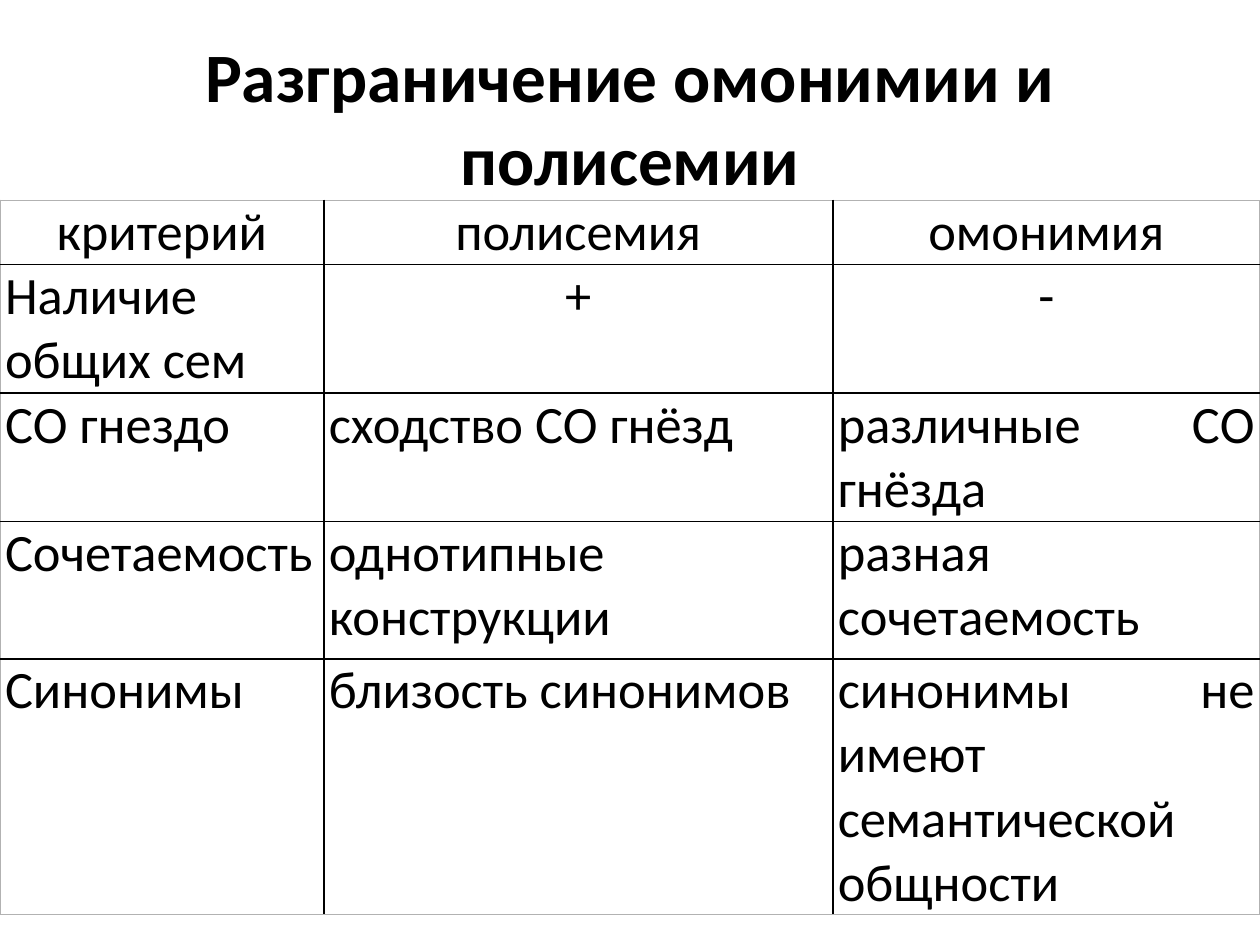
import pptx
import pptx.dml.color
import pptx.enum.text
import pptx.oxml
import pptx.oxml.ns
import pptx.util
from pptx.util import Inches

BLACK = pptx.dml.color.RGBColor(0, 0, 0)
GREY = pptx.dml.color.RGBColor(0xB2, 0xB2, 0xB2)
ALIGN = pptx.enum.text.PP_ALIGN
ANCHOR = pptx.enum.text.MSO_ANCHOR


def write(paragraph, text, alignment, font_format):
    paragraph.alignment = alignment
    run = paragraph.add_run()
    run.text = text
    run.font.color.rgb = BLACK
    for name, value in font_format.items():
        setattr(run.font, name, value)


def add_border(cell, side, color):
    cell._tc.get_or_add_tcPr().append(pptx.oxml.parse_xml(
        f'<a:{side} {pptx.oxml.ns.nsdecls("a")} w="12700"><a:solidFill>'
        f'<a:srgbClr val="{color}"/></a:solidFill></a:{side}>'))


presentation = pptx.Presentation()
presentation.slide_width = Inches(10)
presentation.slide_height = Inches(7.5)
slide = presentation.slides.add_slide(presentation.slide_layouts[6])

# Title
title = slide.shapes.add_textbox(Inches(0.5), Inches(0.3), Inches(9), Inches(1.25))
title.text_frame.word_wrap = True
title.text_frame.vertical_anchor = ANCHOR.MIDDLE
write(title.text_frame.paragraphs[0], "Разграничение омонимии и полисемии", ALIGN.CENTER,
      {"name": "Calibri", "size": pptx.util.Pt(39.6), "bold": True})

# Comparison of polysemy and homonymy
criteria = [
    ("критерий", "полисемия", "омонимия"),
    ("Наличие общих сем", "+", "-"),
    ("СО гнездо", "сходство СО гнёзд", "различные СО гнёзда"),
    ("Сочетаемость", "однотипные конструкции", "разная сочетаемость"),
    ("Синонимы", "близость синонимов", "синонимы не имеют семантической общности"),
]
column_widths = [2.57, 4.04, 3.39]
row_heights = [0.51, 1.02, 1.02, 1.09, 2.03]
comparison = slide.shapes.add_table(
    len(row_heights), len(column_widths), Inches(0), Inches(1.59),
    Inches(sum(column_widths)), Inches(sum(row_heights))).table
comparison.first_row = False
comparison.horz_banding = False
for column, width in zip(comparison.columns, column_widths):
    column.width = Inches(width)
for row, height in zip(comparison.rows, row_heights):
    row.height = Inches(height)

cell_format = {
    "margin_left": Inches(0.04), "margin_right": Inches(0.04),
    "margin_top": 0, "margin_bottom": 0, "vertical_anchor": ANCHOR.TOP,
}
cell_font = {"name": "Calibri", "size": pptx.util.Pt(30), "bold": False}
last_row, last_column = len(row_heights) - 1, len(column_widths) - 1
for r, entries in enumerate(criteria):
    for c, entry in enumerate(entries):
        cell = comparison.cell(r, c)
        for name, value in cell_format.items():
            setattr(cell, name, value)
        centred = r == 0 or entry in "+-"
        write(cell.text_frame.paragraphs[0], entry,
              ALIGN.CENTER if centred else ALIGN.JUSTIFY, cell_font)
        # Grey frame outside, black grid inside
        outer = {"lnL": c == 0, "lnR": c == last_column, "lnT": r == 0, "lnB": r == last_row}
        for side, is_outer in outer.items():
            add_border(cell, side, GREY if is_outer else BLACK)
        cell.fill.background()

presentation.save("out.pptx")
